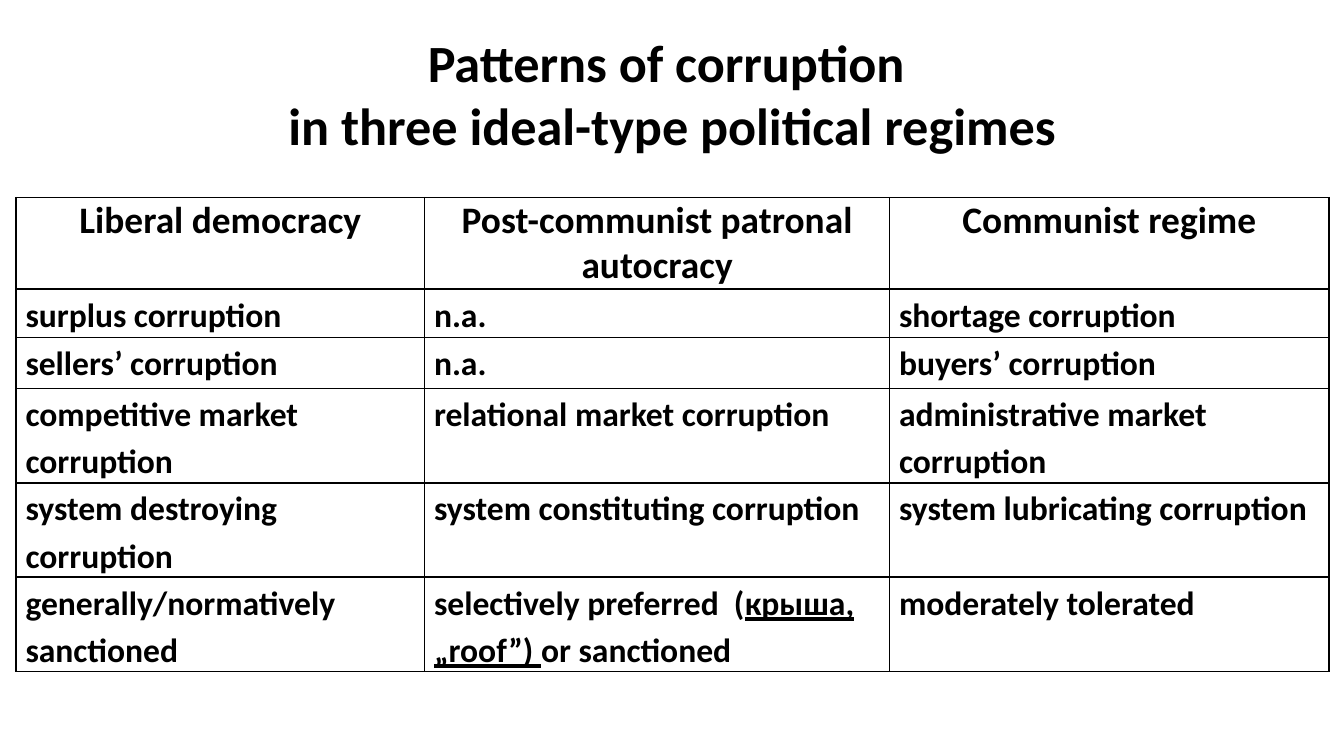
from lxml.etree import SubElement
from pptx import Presentation
from pptx.dml.color import RGBColor
from pptx.enum.text import MSO_ANCHOR, PP_ALIGN
from pptx.oxml.ns import qn
from pptx.util import Inches, Pt

BLACK = RGBColor(0, 0, 0)
WHITE = RGBColor(255, 255, 255)


def add_text(p, text, size=18, align=PP_ALIGN.LEFT, spacing=None, underline=False):
    p.alignment = align
    p.line_spacing = spacing
    r = p.add_run()
    r.text = text
    r.font.name = "Calibri"
    r.font.size = Pt(size)
    r.font.bold = True
    r.font.underline = underline
    r.font.color.rgb = BLACK


def add_borders(cell, width=1):
    tcPr = cell._tc.get_or_add_tcPr()
    for side in ("lnL", "lnR", "lnT", "lnB"):
        ln = SubElement(tcPr, qn("a:" + side), w=str(Pt(width)))
        fill = SubElement(ln, qn("a:solidFill"))
        SubElement(fill, qn("a:srgbClr"), val=str(BLACK))


# 16:9 slide
prs = Presentation()
prs.slide_width = Inches(10)
prs.slide_height = Inches(10 * 9 / 16)
s = prs.slides.add_slide(prs.slide_layouts[5])

# Title
title = s.shapes.title
title.left, title.top = Inches(0.5), Inches(0.31)
title.width, title.height = Inches(9), Inches(0.77)
tf = title.text_frame
tf.word_wrap = True
tf.vertical_anchor = MSO_ANCHOR.MIDDLE
p = tf.paragraphs[0]
add_text(p, "Patterns of corruption ", size=28, align=PP_ALIGN.CENTER)
p.add_line_break()
add_text(p, "in three ideal-type political regimes", size=28, align=PP_ALIGN.CENTER)

# Table: a cell is a list of runs, every second one underlined
rows = [
    [["Liberal democracy"], ["Post-communist patronal autocracy"], ["Communist regime"]],
    [["surplus corruption"], ["n.a."], ["shortage corruption"]],
    [["sellers’ corruption"], ["n.a."], ["buyers’ corruption"]],
    [["competitive market corruption"], ["relational market corruption"],
     ["administrative market corruption"]],
    [["system destroying corruption"], ["system constituting corruption"],
     ["system lubricating corruption"]],
    [["generally/normatively sanctioned"],
     ["selectively preferred  (", "крыша, „roof”) ", "or sanctioned"],
     ["moderately tolerated"]],
]
col_widths = [3.04, 3.46, 3.27]
row_heights = [0.63, 0.36, 0.38, 0.33, 0.33, 0.62]

table = s.shapes.add_table(len(rows), len(col_widths), Inches(0.12), Inches(1.47),
                           Inches(9.76), Inches(3.48)).table
table.first_row = table.horz_banding = False
for column, width in zip(table.columns, col_widths):
    column.width = Inches(width)
for row, height in zip(table.rows, row_heights):
    row.height = Inches(height)

header_format = {"size": 20, "align": PP_ALIGN.CENTER}
body_format = {"size": 18, "spacing": 1.15}
for i, row in enumerate(rows):
    for j, runs in enumerate(row):
        cell = table.cell(i, j)
        cell.margin_left = cell.margin_right = Inches(0.07)
        cell.margin_top = cell.margin_bottom = 0
        add_borders(cell)
        cell.fill.solid()
        cell.fill.fore_color.rgb = WHITE
        text_format = body_format if i else header_format
        for k, text in enumerate(runs):
            add_text(cell.text_frame.paragraphs[0], text,
                     underline=k % 2 == 1, **text_format)

prs.save("out.pptx")
